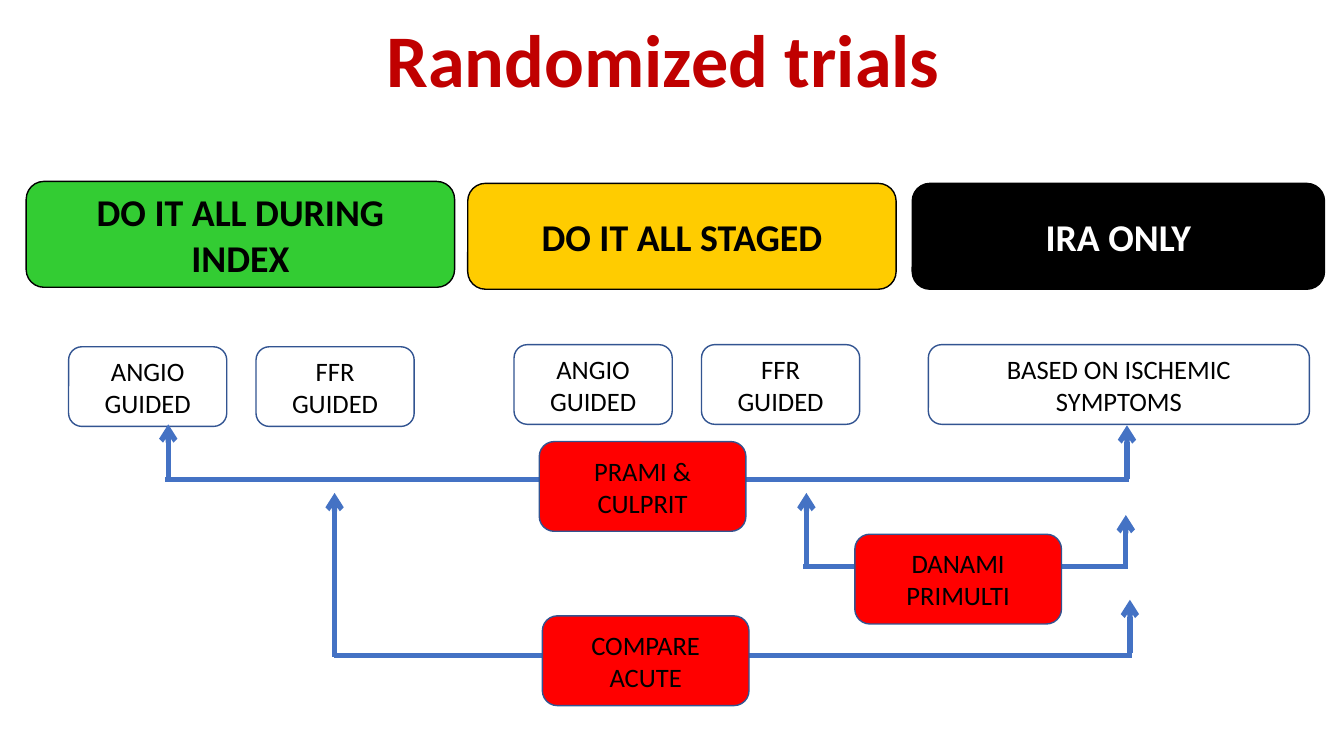
import pptx
import pptx.util
import pptx.dml.color
import pptx.enum.shapes
import pptx.enum.text
import pptx.oxml
import pptx.oxml.ns
import lxml.etree

Pt = pptx.util.Pt
COLORS = {
    "title": "C00000", "black": "000000", "white": "FFFFFF",
    "green": "33CC33", "yellow": "FFCC00", "red": "FF0000",
    "border": "325491", "wire": "4472C4",
}


def add_box(left, top, width, height, lines, size, fill, border, ink, bold=False):
    """Add a rounded box with one centred paragraph per line."""
    box = page.shapes.add_shape(
        pptx.enum.shapes.MSO_SHAPE.ROUNDED_RECTANGLE,
        Pt(left), Pt(top), Pt(width), Pt(height))
    box.shadow.inherit = False
    if fill:
        box.fill.solid()
        box.fill.fore_color.rgb = pptx.dml.color.RGBColor.from_string(COLORS[fill])
    else:
        box.fill.background()
    box.line.color.rgb = pptx.dml.color.RGBColor.from_string(COLORS[border])
    box.line.width = Pt(1)
    frame = box.text_frame
    frame.word_wrap = True
    frame.vertical_anchor = pptx.enum.text.MSO_ANCHOR.MIDDLE
    frame.margin_left = frame.margin_right = Pt(9.6)
    frame.margin_top = frame.margin_bottom = Pt(4.8)
    frame.text = lines
    for para in frame.paragraphs:
        para.alignment = pptx.enum.text.PP_ALIGN.CENTER
        for span in para.runs:
            span.font.name = "Calibri"
            span.font.size = Pt(size)
            span.font.bold = bold
            span.font.color.rgb = pptx.dml.color.RGBColor.from_string(COLORS[ink])


def add_wire(x1, y1, x2, y2, arrow=False):
    """Add a thick straight line, with an arrowhead at its end if asked."""
    wire = page.shapes.add_connector(
        pptx.enum.shapes.MSO_CONNECTOR.STRAIGHT, Pt(x1), Pt(y1), Pt(x2), Pt(y2))
    wire.line.color.rgb = pptx.dml.color.RGBColor.from_string(COLORS["wire"])
    wire.line.width = Pt(3.75)
    if arrow:
        lxml.etree.SubElement(
            wire.line._get_or_add_ln(), pptx.oxml.ns.qn("a:tailEnd"), type="arrow")
    lxml.etree.SubElement(wire._element.spPr, pptx.oxml.ns.qn("a:effectLst"))


deck = pptx.Presentation()
deck.slide_width, deck.slide_height = Pt(960), Pt(540)
page = deck.slides.add_slide(deck.slide_layouts[6])

# Title
title = page.shapes.add_textbox(Pt(42), Pt(0), Pt(864), Pt(90))
title.text_frame.word_wrap = True
title.text_frame.vertical_anchor = pptx.enum.text.MSO_ANCHOR.MIDDLE
title.text_frame.text = "Randomized trials"
para = title.text_frame.paragraphs[0]
para.alignment = pptx.enum.text.PP_ALIGN.CENTER
para.line_spacing = 0.9
font = para.runs[0].font
font.name, font.size, font.bold = "Calibri", Pt(53), True
font.color.rgb = pptx.dml.color.RGBColor.from_string(COLORS["title"])

# Strategy headers
for left, top, width, label, fill, ink in [
    (18.7, 129.6, 306, "DO IT ALL DURING INDEX", "green", "black"),
    (334.1, 131, 306, "DO IT ALL STAGED", "yellow", "black"),
    (651.6, 131, 294.5, "IRA ONLY", "black", "white"),
]:
    add_box(left, top, width, 75.6, label, 27, fill, "black", ink, bold=True)

# Guidance under each strategy
for left, top in [(49, 247.7), (367.2, 246.2)]:
    for column, method in enumerate(["ANGIO", "FFR"]):
        add_box(left + column * 133.9, top, 113, 56.9, method + "\nGUIDED",
                19, None, "border", "black")
add_box(663.1, 246.2, 272.2, 56.9, "BASED ON ISCHEMIC SYMPTOMS",
        19, None, "border", "black")

# Trials: box, horizontal wire (x1, x2, y), arrows (x, start, tip)
trials = [
    ("PRAMI & CULPRIT", 385.2, 315.4, (118.1, 806.4, 342.7),
     [(120.2, 340.6, 303.1), (805, 342, 303.8)]),
    ("DANAMI\nPRIMULTI", 610.6, 381.6, (573.8, 804.2, 404.6),
     [(576, 405.4, 352.1), (804.2, 406.1, 367.9)]),
    ("COMPARE\nACUTE", 387.4, 439.9, (238.3, 808.6, 468),
     [(239, 469.4, 352.1), (807.1, 466.6, 428.4)]),
]
for name, left, top, (x1, x2, y), arrows in trials:
    add_wire(x1, y, x2, y)
    for x, start, tip in arrows:
        add_wire(x, start, x, tip, arrow=True)
    add_box(left, top, 147.6, 64.1, name, 19, "red", "border", "black")

deck.save("out.pptx")
